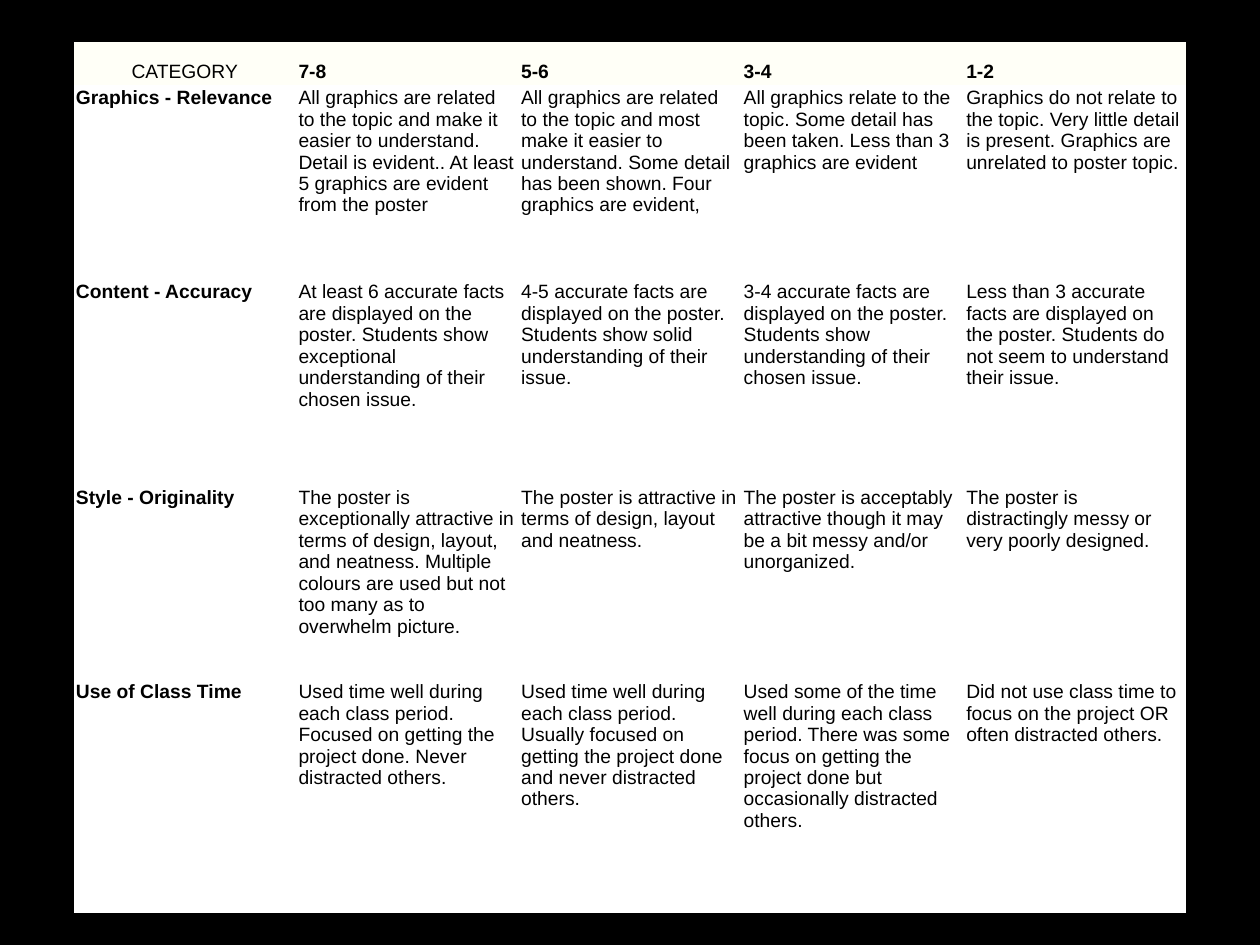
from pptx import Presentation
from pptx.dml.color import RGBColor
from pptx.enum.text import MSO_ANCHOR, PP_ALIGN
from pptx.util import Pt

COLORS = {"back": "000000", "head": "FFFFF7", "body": "FFFFFF", "text": "000000"}
PLAIN = "{2D5ABB26-0587-4C30-8999-92F81FD0307C}"
WIDTH = 127.2
HEIGHTS = [24.5, 111, 117.5, 111, 134]
ROWS = [
    ["CATEGORY", "7-8", "5-6", "3-4", "1-2"],
    [
        "Graphics - Relevance",
        "All graphics are related to the topic and make it easier to understand. "
        "Detail is evident.. At least 5 graphics are evident from the poster",
        "All graphics are related to the topic and most make it easier to understand. "
        "Some detail has been shown. Four graphics are evident,",
        "All graphics relate to the topic. Some detail has been taken. "
        "Less than 3 graphics are evident",
        "Graphics do not relate to the topic. Very little detail is present. "
        "Graphics are unrelated to poster topic.",
    ],
    [
        "Content - Accuracy",
        "At least 6 accurate facts are displayed on the poster. "
        "Students show exceptional understanding of their chosen issue.",
        "4-5 accurate facts are displayed on the poster. "
        "Students show solid understanding of their issue.",
        "3-4 accurate facts are displayed on the poster. "
        "Students show understanding of their chosen issue.",
        "Less than 3 accurate facts are displayed on the poster. "
        "Students do not seem to understand their issue.",
    ],
    [
        "Style - Originality",
        "The poster is exceptionally attractive in terms of design, layout, and neatness. "
        "Multiple colours are used but not too many as to overwhelm picture.",
        "The poster is attractive in terms of design, layout and neatness.",
        "The poster is acceptably attractive though it may be a bit messy and/or unorganized.",
        "The poster is distractingly messy or very poorly designed.",
    ],
    [
        "Use of Class Time",
        "Used time well during each class period. "
        "Focused on getting the project done. Never distracted others.",
        "Used time well during each class period. "
        "Usually focused on getting the project done and never distracted others.",
        "Used some of the time well during each class period. There was some focus "
        "on getting the project done but occasionally distracted others.",
        "Did not use class time to focus on the project OR often distracted others.",
    ],
]

deck = Presentation()
deck.slide_width, deck.slide_height = Pt(720), Pt(540)
slide = deck.slides.add_slide(deck.slide_layouts[6])
slide.background.fill.solid()
slide.background.fill.fore_color.rgb = RGBColor.from_string(COLORS["back"])

frame = slide.shapes.add_table(
    len(ROWS), len(ROWS[0]), Pt(42), Pt(24), Pt(WIDTH * len(ROWS[0])), Pt(sum(HEIGHTS))
)
table = frame.table
table.first_row = table.horz_banding = False
table._tbl.tblPr.find("{*}tableStyleId").text = PLAIN
for column in table.columns:
    column.width = Pt(WIDTH)

for r, (height, texts) in enumerate(zip(HEIGHTS, ROWS)):
    table.rows[r].height = Pt(height)
    for c, text in enumerate(texts):
        cell = table.cell(r, c)
        cell.margin_left = cell.margin_right = Pt(1.4)
        cell.margin_top = cell.margin_bottom = Pt(1.4)
        cell.vertical_anchor = MSO_ANCHOR.TOP if r else MSO_ANCHOR.BOTTOM
        cell.fill.solid()
        cell.fill.fore_color.rgb = RGBColor.from_string(COLORS["body" if r else "head"])
        cell.text_frame.text = text
        line = cell.text_frame.paragraphs[0]
        line.alignment = PP_ALIGN.LEFT if r or c else PP_ALIGN.CENTER
        font = line.runs[0].font
        font.name, font.size = "Arial", Pt(11)
        font.bold = (r == 0) != (c == 0)
        font.color.rgb = RGBColor.from_string(COLORS["text"])

deck.save("out.pptx")
